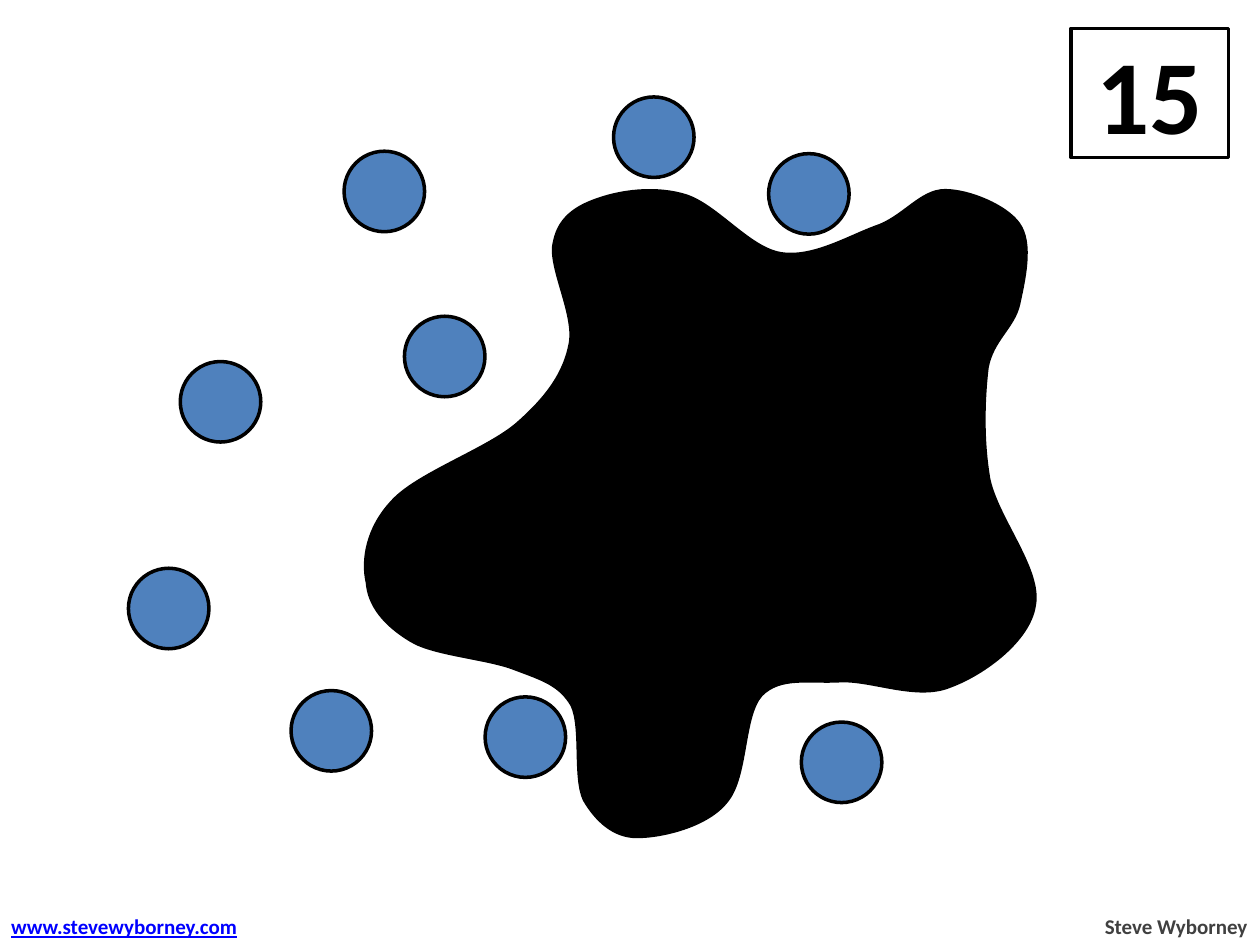
from pptx import Presentation
from pptx.dml.color import RGBColor
from pptx.enum.shapes import MSO_SHAPE as Shape
from pptx.enum.text import MSO_ANCHOR as Anchor, MSO_AUTO_SIZE as AutoSize, PP_ALIGN as Align
from pptx.oxml.xmlchemy import OxmlElement
from pptx.util import Pt

BLACK, WHITE, BLUE, GREY, LINK = "000000", "FFFFFF", "4F81BD", "404040", "0000FF"
DOT_SIZE = 46
DOTS = [
    (73.4, 324.7), (457.9, 412.6), (277.2, 398.2),
    (103, 206.6), (166.3, 394.6), (231.1, 180.7),
    (439.2, 87.8), (196.6, 86.4), (350.6, 55.4),
]
BLOT_START = (235, 366)
# Each row is one Bézier curve: two control points and the end point.
BLOT_CURVES = [
    [(220, 357), (211, 346), (210, 333)],
    [(207, 320), (210, 302), (224, 287)],
    [(238, 271), (279, 257), (296, 242)],
    [(313, 227), (323, 213), (326, 196)],
    [(329, 179), (313, 151), (317, 138)],
    [(320, 123), (332, 117), (345, 113)],
    [(358, 109), (376, 107), (392, 112)],
    [(410, 118), (428, 142), (446, 145)],
    [(464, 148), (484, 136), (500, 130)],
    [(516, 125), (526, 109), (540, 109)],
    [(554, 109), (575, 118), (582, 128)],
    [(590, 139), (585, 160), (582, 174)],
    [(579, 187), (567, 194), (564, 210)],
    [(562, 227), (561, 251), (565, 274)],
    [(570, 297), (595, 326), (591, 346)],
    [(588, 366), (562, 385), (543, 392)],
    [(524, 400), (498, 388), (480, 389)],
    [(462, 390), (446, 386), (435, 397)],
    [(424, 409), (427, 444), (415, 458)],
    [(404, 472), (378, 478), (364, 478)],
    [(351, 478), (341, 469), (334, 457)],
    [(328, 444), (333, 416), (327, 403)],
    [(320, 391), (310, 388), (294, 382)],
    [(279, 376), (248, 374), BLOT_START],
]


def color(code):
    return RGBColor.from_string(code)


def paint(shape, fill):
    shape.shadow.inherit = False
    shape.fill.solid()
    shape.fill.fore_color.rgb = color(fill)
    shape.line.color.rgb = color(BLACK)
    shape.line.width = Pt(2)


def add_figure(page, kind, left, top, width, height, fill):
    shape = page.shapes.add_shape(kind, Pt(left), Pt(top), Pt(width), Pt(height))
    paint(shape, fill)
    return shape


def add_blot(page):
    """Draw a closed outline, then turn every three line segments into a curve."""
    builder = page.shapes.build_freeform(*BLOT_START, scale=Pt(1))
    builder.add_line_segments([point for curve in BLOT_CURVES for point in curve])
    blot = builder.convert_to_shape()
    paint(blot, BLACK)
    lines = blot._element.xpath(".//a:lnTo")
    for first in range(0, len(lines), 3):
        curve = OxmlElement("a:cubicBezTo")
        lines[first].addprevious(curve)
        for line in lines[first:first + 3]:
            curve.append(line[0])
            line.getparent().remove(line)


def write(frame, text, size, code, align=Align.LEFT, underline=False):
    para = frame.paragraphs[0]
    para.alignment = align
    span = para.add_run()
    span.text = text
    span.font.name = "Calibri"
    span.font.size = Pt(size)
    span.font.bold = True
    span.font.underline = underline
    span.font.color.rgb = color(code)


def add_label(page, left, width, text, code, **style):
    box = page.shapes.add_textbox(Pt(left), Pt(518.4), Pt(width), Pt(21.6))
    box.text_frame.word_wrap = False
    box.text_frame.auto_size = AutoSize.SHAPE_TO_FIT_TEXT
    write(box.text_frame, text, 12, code, **style)
    return box


def main():
    deck = Presentation()
    deck.slide_width, deck.slide_height = Pt(720), Pt(540)
    page = deck.slides.add_slide(deck.slide_layouts[6])

    add_blot(page)
    for left, top in DOTS:
        add_figure(page, Shape.OVAL, left, top, DOT_SIZE, DOT_SIZE, BLUE)

    number = add_figure(page, Shape.RECTANGLE, 612, 16.2, 90, 73.8, WHITE)
    number.text_frame.vertical_anchor = Anchor.MIDDLE
    write(number.text_frame, "15", 60, BLACK, align=Align.CENTER)

    add_label(page, 623.5, 96.5, "Steve Wyborney", GREY, align=Align.RIGHT)
    address = add_label(page, -0.7, 147.6, "www.stevewyborney.com", LINK, underline=True)
    write(address.text_frame, " ", 12, GREY)

    deck.save("out.pptx")


if __name__ == "__main__":
    main()
